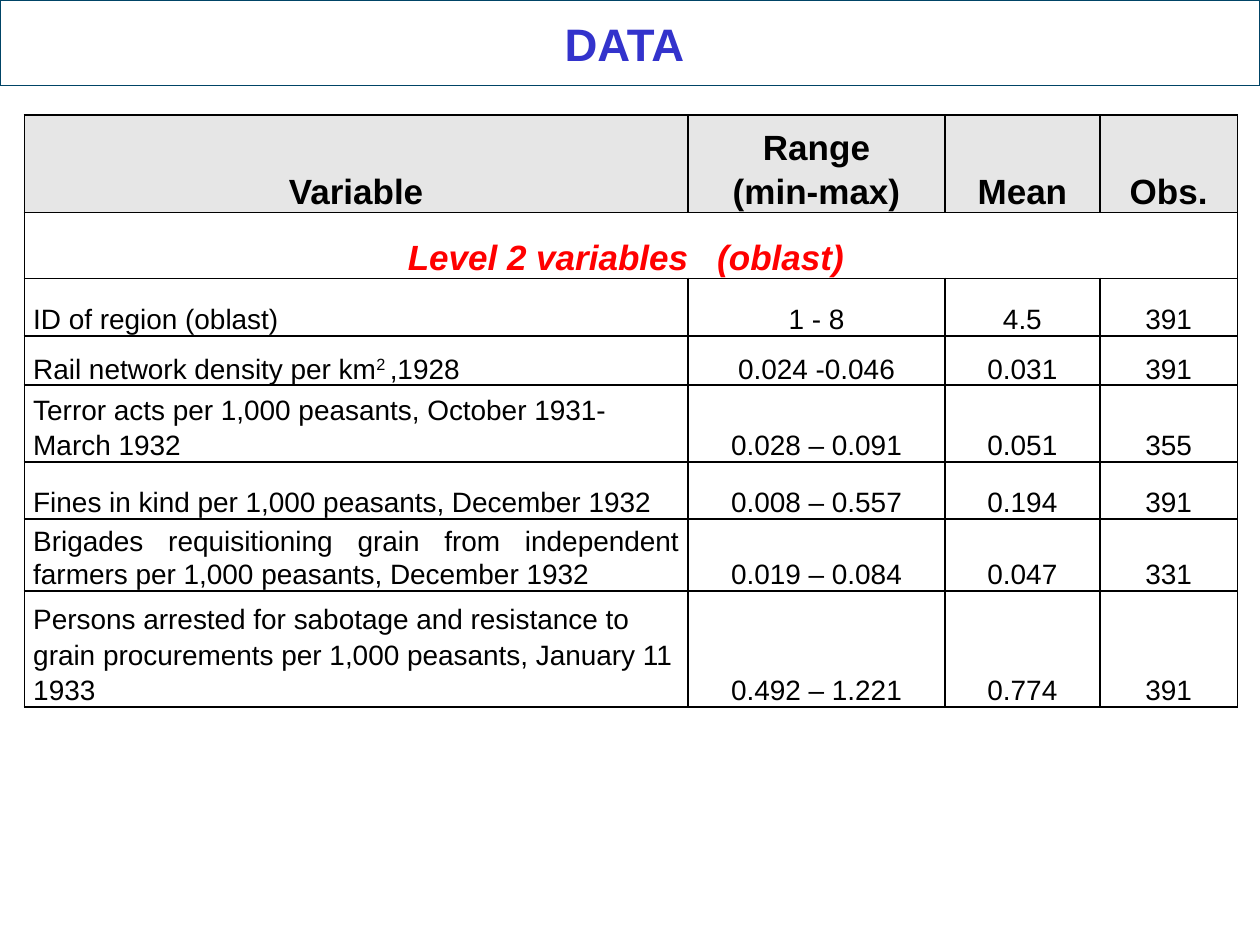
from lxml.etree import fromstring
from pptx import Presentation
from pptx.dml.color import RGBColor
from pptx.enum.text import MSO_ANCHOR, MSO_AUTO_SIZE, PP_ALIGN
from pptx.util import Cm, Pt

FONT = "Arial"
HUES = {
    "title": "3333CC",
    "frame": "004466",
    "head": "E6E6E6",
    "level": "FF0000",
    "text": "000000",
    "paper": "FFFFFF",
}
COLS = [13.38, 5.18, 3.12, 2.78]
ROWS = [1.96, 1.33, 1.16, 0.99, 1.55, 1.15, 1.45, 2.34]
HEADS = ["Variable", "Range\n(min-max)", "Mean", "Obs."]
LEVEL = "Level 2 variables   (oblast) "
RAIL = ["Rail network density per km", "2 ", ",1928"]
DATA = [
    ["ID of region (oblast)", "1 - 8", "4.5", "391"],
    ["", "0.024 -0.046", "0.031", "391"],
    ["Terror acts per 1,000 peasants, October 1931-March 1932",
     "0.028 – 0.091", "0.051", "355"],
    ["Fines in kind per 1,000 peasants, December 1932",
     "0.008 – 0.557", "0.194", "391"],
    ["Brigades requisitioning grain from independent farmers "
     "per 1,000 peasants, December 1932 ",
     "0.019 – 0.084", "0.047", "331"],
    ["Persons arrested for sabotage and resistance to grain procurements "
     "per 1,000 peasants, January 11 1933",
     "0.492 – 1.221", "0.774", "391"],
]
RAIL_ROW, GRAIN_ROW = 3, 6
NS = "http://schemas.openxmlformats.org/drawingml/2006/main"


def color(name):
    return RGBColor.from_string(HUES[name])


def style(para, size, hue, bold=False, italic=False):
    font = para.font
    font.name, font.size = FONT, Pt(size)
    font.bold, font.italic = bold, italic
    font.color.rgb = color(hue)


def paint(item, hue):
    item.fill.solid()
    item.fill.fore_color.rgb = color(hue)


def add_title(slide):
    title = slide.shapes.title
    title.left, title.top = Cm(0), Cm(0)
    title.width, title.height = Cm(25.4), Cm(1.73)
    paint(title, "paper")
    title.line.color.rgb = color("frame")
    title.line.width = Pt(0.75)
    frame = title.text_frame
    frame.text = "DATA "
    frame.word_wrap = False
    frame.auto_size = MSO_AUTO_SIZE.NONE
    frame.vertical_anchor = MSO_ANCHOR.MIDDLE
    para = frame.paragraphs[0]
    para.alignment = PP_ALIGN.CENTER
    style(para, 26, "title", bold=True)


def add_edges(cell):
    props = cell._tc.get_or_add_tcPr()
    for spot, side in enumerate("LRTB"):
        props.insert(spot, fromstring(
            f'<a:ln{side} xmlns:a="{NS}" w="{Pt(1)}"><a:solidFill>'
            f'<a:srgbClr val="{HUES["text"]}"/></a:solidFill></a:ln{side}>'))


def fill_cell(cell, text, size=16, hue="text", back="paper", bold=False,
              italic=False, align=PP_ALIGN.CENTER, space=1.15, side=0.18):
    cell.text = text
    cell.vertical_anchor = MSO_ANCHOR.BOTTOM
    cell.margin_left = cell.margin_right = Cm(side)
    cell.margin_top = cell.margin_bottom = Cm(0)
    paint(cell, back)
    for para in cell.text_frame.paragraphs:
        para.alignment = align
        para.line_spacing = space
        style(para, size, hue, bold, italic)


def add_rail(cell):
    para = cell.text_frame.paragraphs[0]
    for text in RAIL:
        para.add_run().text = text
    para.runs[1]._r.get_or_add_rPr().set("baseline", "30000")


def add_grid(slide):
    grid = slide.shapes.add_table(
        len(ROWS), len(COLS), Cm(0.49), Cm(2.32),
        Cm(sum(COLS)), Cm(sum(ROWS))).table
    grid.first_row = grid.horz_banding = False
    for col, width in zip(grid.columns, COLS):
        col.width = Cm(width)
    for row, height in zip(grid.rows, ROWS):
        row.height = Cm(height)
    for x, text in enumerate(HEADS):
        fill_cell(grid.cell(0, x), text, 20, back="head", bold=True, side=0.13)
    grid.cell(1, 0).merge(grid.cell(1, len(COLS) - 1))
    fill_cell(grid.cell(1, 0), LEVEL, 20, "level", bold=True, italic=True,
              space=1.0)
    for y, row in enumerate(DATA, 2):
        for x, text in enumerate(row):
            align, space = PP_ALIGN.CENTER, 1.15
            if x == 0:
                align = PP_ALIGN.LEFT
                if y == GRAIN_ROW:
                    align, space = PP_ALIGN.JUSTIFY, 1.07
            fill_cell(grid.cell(y, x), text, align=align, space=space)
    add_rail(grid.cell(RAIL_ROW, 0))
    for cell in grid.iter_cells():
        add_edges(cell)


def main():
    deck = Presentation()
    deck.slide_width, deck.slide_height = Cm(25.4), Cm(19.05)
    slide = deck.slides.add_slide(deck.slide_layouts[5])
    add_title(slide)
    add_grid(slide)
    deck.save("out.pptx")


if __name__ == "__main__":
    main()
